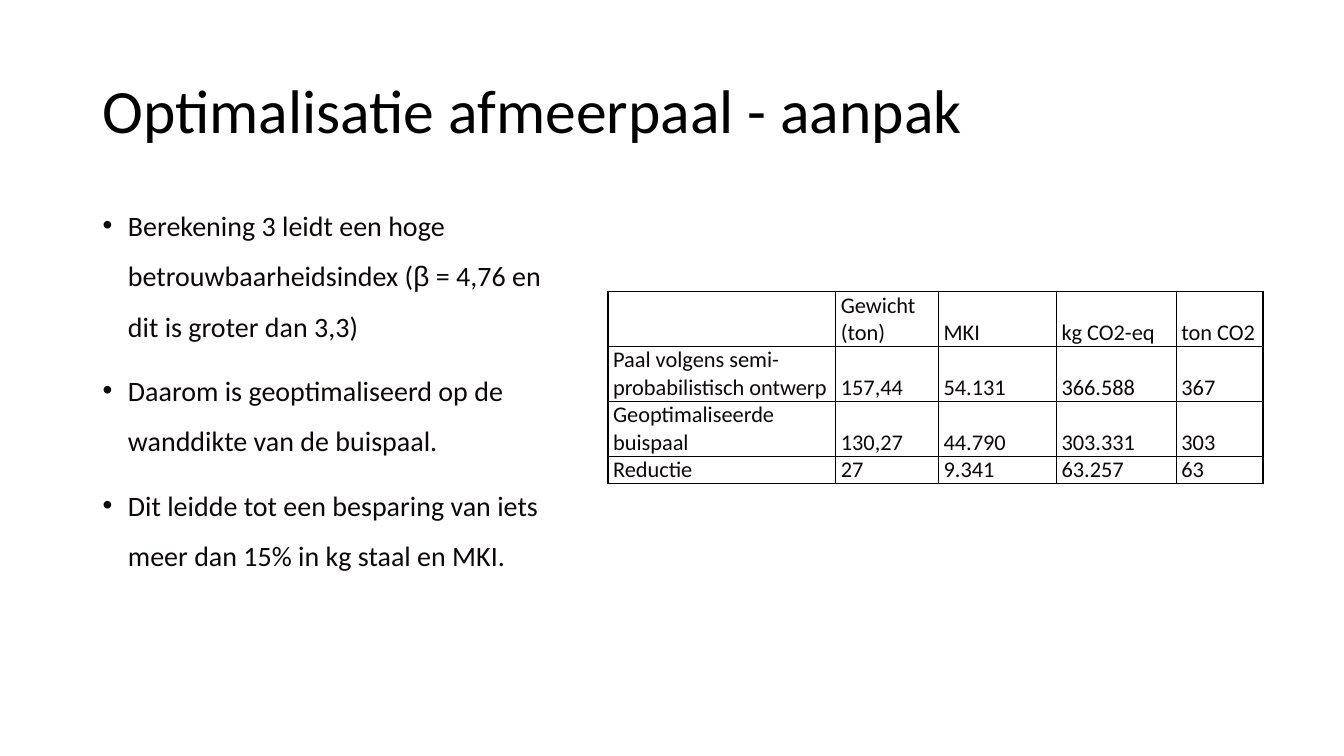
from dataclasses import dataclass

from pptx import Presentation
from pptx.dml.color import RGBColor
from pptx.enum.text import MSO_ANCHOR, MSO_AUTO_SIZE, PP_ALIGN
from pptx.oxml.ns import qn
from pptx.util import Cm, Pt
from lxml.etree import SubElement


@dataclass(frozen=True)
class Theme:
    font: str = "Calibri"
    symbol_font: str = "Arial"
    title_color: str = "000000"
    text_color: str = "0C0808"
    border_color: str = "000000"
    title_size: int = 44
    body_size: int = 20
    table_size: int = 16
    border_width: int = 1


@dataclass(frozen=True)
class Box:
    left: float
    top: float
    width: float
    height: float

    def place(self, part):
        part.left, part.top = Cm(self.left), Cm(self.top)
        part.width, part.height = Cm(self.width), Cm(self.height)


THEME = Theme()
TITLE = "Optimalisatie afmeerpaal - aanpak"
SYMBOL = "β"
FINDINGS = [
    "Berekening 3 leidt een hoge betrouwbaarheidsindex (β = 4,76 en dit is groter dan 3,3)",
    "Daarom is geoptimaliseerd op de wanddikte van de buispaal.",
    "Dit leidde tot een besparing van iets meer dan 15% in kg staal en MKI.",
]
COMPARISON = [
    ["", "Gewicht (ton)", "MKI", "kg CO2-eq", "ton CO2"],
    ["Paal volgens semi-probabilistisch ontwerp", "157,44", "54.131", "366.588", "367"],
    ["Geoptimaliseerde buispaal", "130,27", "44.790", "303.331", "303"],
    ["Reductie", "27", "9.341", "63.257", "63"],
]
COLUMN_SHARES = [2.26, 1.02, 1.17, 1.19, 0.86]
ROW_HEIGHT = 0.51


def style(font, size, color):
    font.name, font.size = THEME.font, Pt(size)
    font.color.rgb = RGBColor.from_string(color)


def add_bullet(paragraph):
    properties = paragraph._p.get_or_add_pPr()
    properties.set("marL", str(Cm(0.64)))
    properties.set("indent", str(-Cm(0.64)))
    SubElement(properties, qn("a:buFont"), typeface=THEME.symbol_font)
    SubElement(properties, qn("a:buChar"), char="•")


def add_borders(cell):
    properties = cell._tc.get_or_add_tcPr()
    for index, side in enumerate(("lnL", "lnR", "lnT", "lnB")):
        line = properties.makeelement(qn(f"a:{side}"), {"w": str(Pt(THEME.border_width))})
        fill = SubElement(line, qn("a:solidFill"))
        SubElement(fill, qn("a:srgbClr"), val=THEME.border_color)
        properties.insert(index, line)


def fill_title(title, box):
    box.place(title)
    frame = title.text_frame
    frame.text = TITLE
    frame.auto_size = MSO_AUTO_SIZE.NONE
    frame.vertical_anchor = MSO_ANCHOR.MIDDLE
    heading = frame.paragraphs[0]
    heading.alignment = PP_ALIGN.LEFT
    heading.line_spacing = 0.9
    style(heading.font, THEME.title_size, THEME.title_color)


def fill_findings(body, box):
    box.place(body)
    frame = body.text_frame
    frame.auto_size = MSO_AUTO_SIZE.NONE
    for index, finding in enumerate(FINDINGS):
        paragraph = frame.add_paragraph() if index else frame.paragraphs[0]
        add_bullet(paragraph)
        paragraph.line_spacing = 1.5
        paragraph.space_before = Pt(10 if index else 0)
        style(paragraph.font, THEME.body_size, THEME.text_color)
        # The Greek letter stands in its own font
        for part in finding.partition(SYMBOL):
            if part:
                run = paragraph.add_run()
                run.text = part
                if part == SYMBOL:
                    run.font.name = THEME.symbol_font


def add_comparison(slide, box):
    frame = slide.shapes.add_table(
        len(COMPARISON), len(COLUMN_SHARES),
        Cm(box.left), Cm(box.top), Cm(box.width), Cm(box.height))
    table = frame.table
    table.first_row = table.horz_banding = False
    for column, share in zip(table.columns, COLUMN_SHARES):
        column.width = Cm(box.width * share / sum(COLUMN_SHARES))
    # Rows grow to fit their text
    for row, values in zip(table.rows, COMPARISON):
        row.height = Cm(ROW_HEIGHT)
        for cell, value in zip(row.cells, values):
            cell.text = value
            cell.vertical_anchor = MSO_ANCHOR.BOTTOM
            cell.margin_left = cell.margin_right = Cm(0.13)
            cell.margin_top = cell.margin_bottom = 0
            cell.fill.background()
            add_borders(cell)
            style(cell.text_frame.paragraphs[0].font, THEME.table_size, THEME.text_color)
    box.place(frame)


def build_comparison_slide(presentation):
    slide = presentation.slides.add_slide(presentation.slide_layouts[1])
    fill_title(slide.shapes.title, Box(2.33, 1.01, 29.21, 3.68))
    fill_findings(slide.placeholders[1], Box(2.33, 4.7, 12.12, 12.09))
    add_comparison(slide, Box(15.32, 7.35, 16.51, 4.75))


def main():
    presentation = Presentation()
    presentation.slide_width, presentation.slide_height = Cm(33.87), Cm(19.05)
    build_comparison_slide(presentation)
    presentation.save("out.pptx")


if __name__ == "__main__":
    main()
